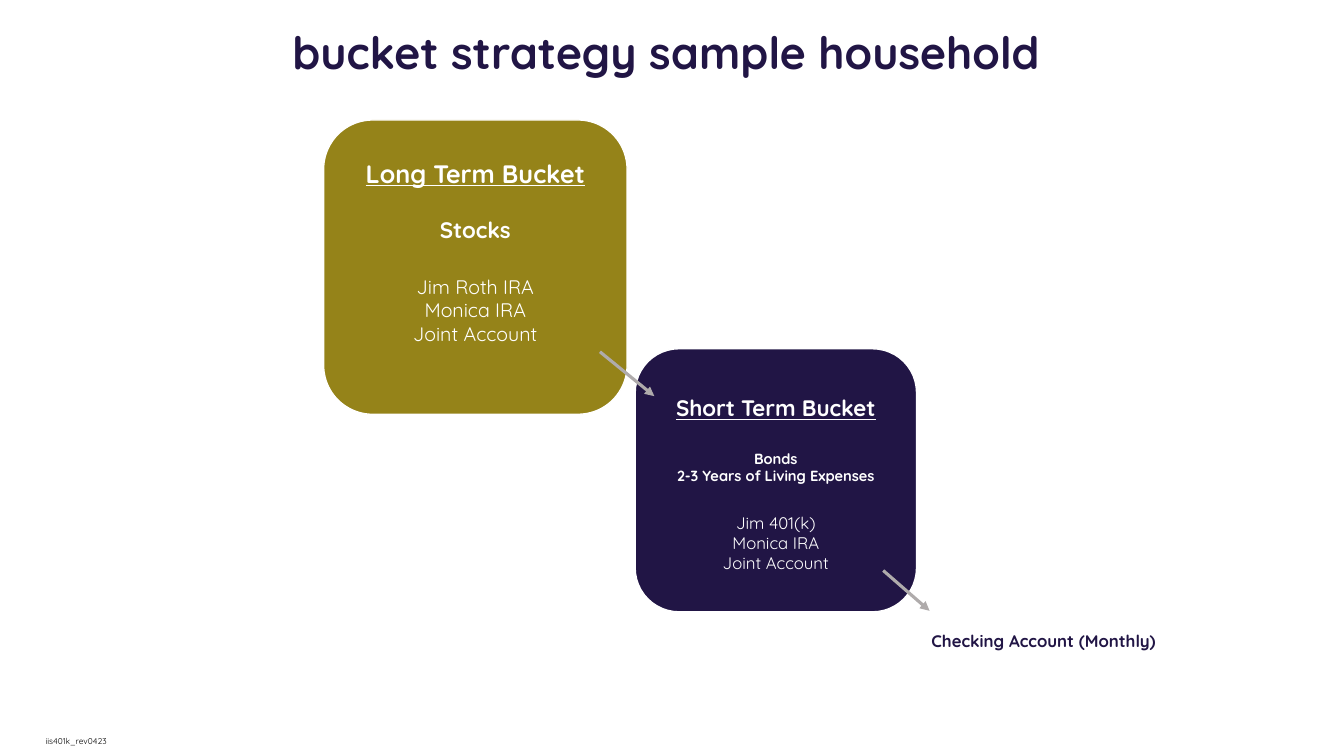
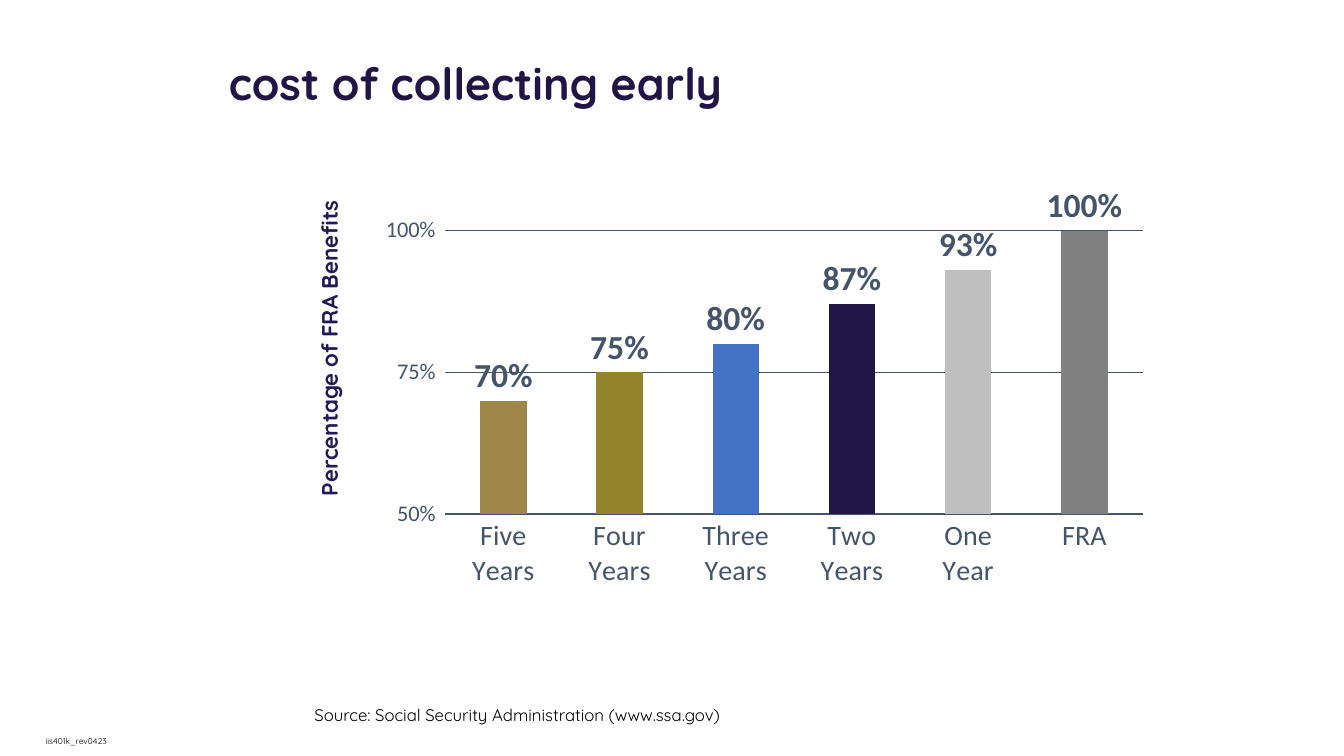
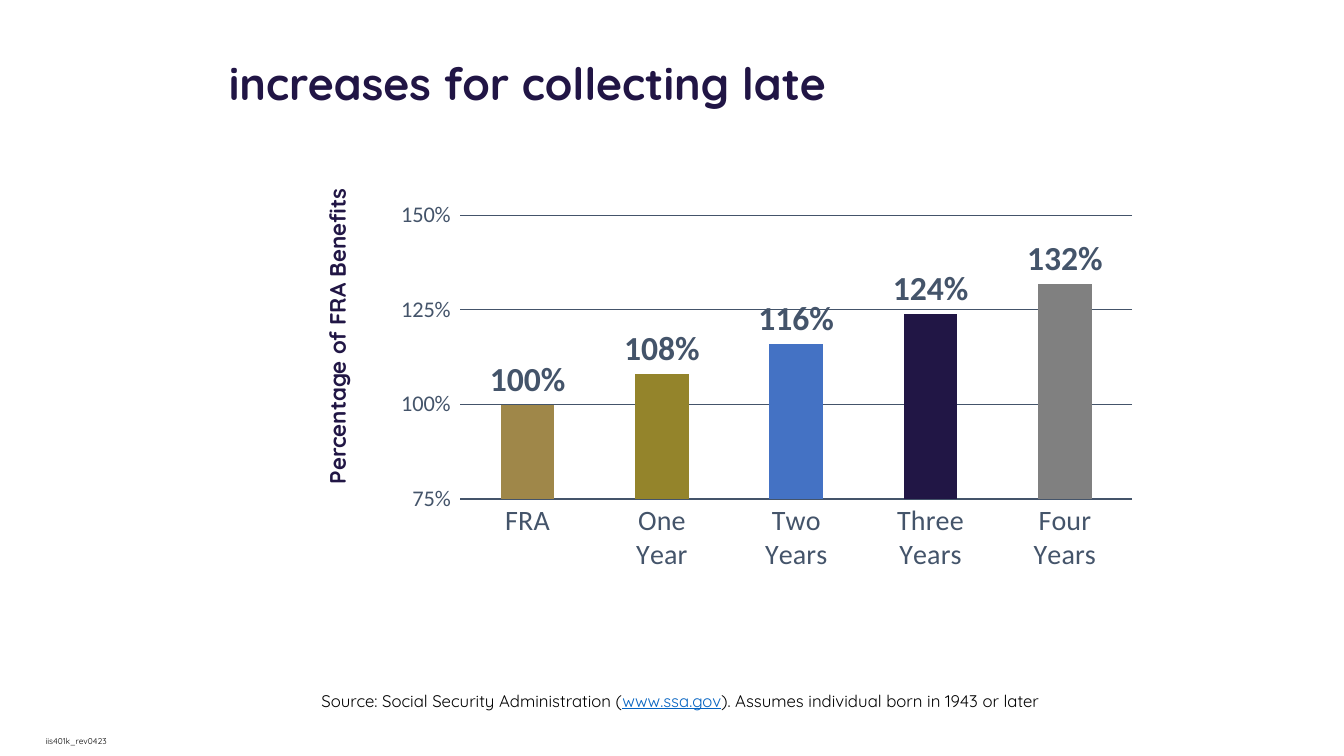
"""Build three slides on retirement buckets and benefit timing."""
import pptx
import pptx.util
import pptx.chart.data
import pptx.dml.color
import pptx.enum.chart
import pptx.enum.shapes
import pptx.enum.text
import pptx.oxml
import pptx.oxml.ns

Inches = pptx.util.Inches
Pt = pptx.util.Pt
RGB = pptx.dml.color.RGBColor
ALIGN = pptx.enum.text.PP_ALIGN
ANCHOR = pptx.enum.text.MSO_ANCHOR

WHITE = RGB(0xFF, 0xFF, 0xFF)
BLACK = RGB(0, 0, 0)
NAVY = RGB(0x21, 0x15, 0x45)
DUSK = RGB(0x21, 0x1A, 0x55)
PLUM = RGB(0x21, 0x16, 0x45)
OLIVE = RGB(0x95, 0x83, 0x19)
MOSS = RGB(0x94, 0x84, 0x2B)
TAN = RGB(0x9F, 0x87, 0x49)
BLUE = RGB(0x44, 0x72, 0xC4)
SLATE = RGB(0x44, 0x54, 0x6A)
SILVER = RGB(0xBF, 0xBF, 0xBF)
GRAY = RGB(0x80, 0x80, 0x80)
ARROW = RGB(0xAF, 0xAB, 0xAB)
LINK = RGB(0x05, 0x63, 0xC1)
FACE = "Quicksand"
BODY = "Calibri"


def style(font, size, color, bold=False, name=FACE):
    """Set the look of a font."""
    font.size, font.bold, font.name = Pt(size), bold, name
    font.color.rgb = color


def place(spot):
    """Turn a tuple of inches into lengths."""
    return [Inches(n) for n in spot]


def start(deck, title, spot):
    """Add a slide with its title and form code."""
    slide = deck.slides.add_slide(deck.slide_layouts[5])
    head = slide.shapes.title
    head.left, head.top, head.width, head.height = place(spot)
    frame = head.text_frame
    frame.text = title
    frame.word_wrap = True
    frame.auto_size = pptx.enum.text.MSO_AUTO_SIZE.NONE
    frame.vertical_anchor = ANCHOR.BOTTOM
    para = frame.paragraphs[0]
    para.alignment, para.line_spacing = ALIGN.LEFT, 0.9
    style(para.font, 32, NAVY, True)
    label(slide, "iis401k_rev0423", (0, 7.26, 1.51, 0.18), 6, BLACK,
          align=ALIGN.CENTER, anchor=ANCHOR.MIDDLE)
    return slide


def label(slide, text, spot, size, color, bold=False, align=ALIGN.LEFT,
          anchor=ANCHOR.TOP, wrap=True):
    """Add a one-line text box."""
    box = slide.shapes.add_textbox(*place(spot))
    frame = box.text_frame
    frame.word_wrap, frame.vertical_anchor = wrap, anchor
    para = frame.paragraphs[0]
    para.text, para.alignment = text, align
    style(para.font, size, color, bold)
    return box


def bucket(slide, spot, fill, lines, head, foot):
    """Add a round box of (text, size, bold, space before) lines."""
    kind = pptx.enum.shapes.MSO_SHAPE.ROUNDED_RECTANGLE
    box = slide.shapes.add_shape(kind, *place(spot))
    box.shadow.inherit = False
    box.fill.solid()
    box.fill.fore_color.rgb = fill
    box.line.color.rgb, box.line.width = WHITE, Pt(1)
    frame = box.text_frame
    frame.word_wrap, frame.vertical_anchor = True, ANCHOR.MIDDLE
    frame.margin_top, frame.margin_bottom = Inches(head), Inches(foot)
    for i, (text, size, bold, gap) in enumerate(lines):
        para = frame.add_paragraph() if i else frame.paragraphs[0]
        para.text, para.alignment = text, ALIGN.CENTER
        para.space_before = Pt(gap)
        style(para.font, size, WHITE, bold)
        para.font.underline = i == 0


def arrow(slide, *ends):
    """Add a gray arrow between two points."""
    kind = pptx.enum.shapes.MSO_CONNECTOR.STRAIGHT
    line = slide.shapes.add_connector(kind, *place(ends))
    line.line.color.rgb, line.line.width = ARROW, Pt(2.25)
    tail = pptx.oxml.ns.qn("a:tailEnd")
    stroke = line.line._get_or_add_ln()
    stroke.append(stroke.makeelement(tail, {"type": "triangle"}))
    props = line._element.spPr
    props.append(props.makeelement(pptx.oxml.ns.qn("a:effectLst"), {}))


def fix_plot(chart):
    """Pin the inner plot area inside the chart."""
    area = chart._chartSpace.chart.plotArea
    old = area.find(pptx.oxml.ns.qn("c:layout"))
    if old is not None:
        area.remove(old)
    rows = [("layoutTarget", "inner"), ("xMode", "edge"), ("yMode", "edge"),
            ("x", 0.1), ("y", 0.2), ("w", 0.88), ("h", 0.62)]
    inner = "".join(f'<c:{tag} val="{val}"/>' for tag, val in rows)
    area.insert(0, pptx.oxml.parse_xml(
        f'<c:layout {pptx.oxml.ns.nsdecls("c")}>'
        f'<c:manualLayout>{inner}</c:manualLayout></c:layout>'))


def columns(slide, spot, bars, low, high):
    """Add a column chart of (name, value, colour) bars."""
    data = pptx.chart.data.CategoryChartData(number_format="0%")
    data.categories = [name for name, _, _ in bars]
    data.add_series("Series 1", [value for _, value, _ in bars])
    kind = pptx.enum.chart.XL_CHART_TYPE.COLUMN_CLUSTERED
    chart = slide.shapes.add_chart(kind, *place(spot), data).chart
    chart.has_title = chart.has_legend = False
    style(chart.font, 18, BLACK, name=BODY)
    fix_plot(chart)

    mark = pptx.enum.chart.XL_TICK_MARK
    base, scale = chart.category_axis, chart.value_axis
    base.major_tick_mark = mark.NONE
    base.format.line.color.rgb = SLATE
    base.format.line.width = Pt(1.5)
    style(base.tick_labels.font, 20, SLATE, name=BODY)
    scale.minimum_scale, scale.maximum_scale = low, high
    scale.major_unit = 0.25
    scale.major_tick_mark = mark.OUTSIDE
    scale.format.line.fill.background()
    grid = scale.major_gridlines.format.line
    grid.color.rgb, grid.width = SLATE, Pt(0.75)
    style(scale.tick_labels.font, 16, SLATE, name=BODY)
    scale.tick_labels.number_format = "0%"
    scale.tick_labels.number_format_is_linked = False

    plot = chart.plots[0]
    plot.gap_width, plot.vary_by_categories = 150, False
    plot.has_data_labels = True
    tags = plot.data_labels
    tags.show_value = True
    tags.number_format, tags.number_format_is_linked = "0%", False
    tags.position = pptx.enum.chart.XL_LABEL_POSITION.OUTSIDE_END
    style(tags.font, 24, SLATE, True, BODY)
    series = plot.series[0]
    series.format.fill.solid()
    series.format.fill.fore_color.rgb = BLUE
    for i, (_, _, color) in enumerate(bars):
        fill = series.points[i].format.fill
        fill.solid()
        fill.fore_color.rgb = color


def side(slide, left, top, color):
    """Add the upright name of the value axis."""
    box = label(slide, "Percentage of FRA Benefits", (left, top, 3.15, 0.37),
                16, color, True, align=ALIGN.CENTER, wrap=False)
    box.rotation = 270


def buckets(deck):
    """Build the bucket slide."""
    slide = start(deck, "bucket strategy sample household",
                  (2.8, 0.2, 8.57, 0.64))
    bucket(slide, (3.21, 1.19, 3.01, 2.92), OLIVE, [
        ("Long Term Bucket", 18, True, 0),
        ("Stocks", 16, True, 20),
        ("Jim Roth IRA", 14, False, 22.5),
        ("Monica IRA", 14, False, 0),
        ("Joint Account", 14, False, 0)], 0.05, 0.36)
    bucket(slide, (6.3, 3.46, 2.79, 2.61), NAVY, [
        ("Short Term Bucket", 16, True, 0),
        ("Bonds", 10.5, True, 20),
        ("2-3 Years of Living Expenses", 10.5, True, 0),
        ("Jim 401(k)", 12, False, 20),
        ("Monica IRA", 12, False, 0),
        ("Joint Account", 12, False, 0)], 0.12, 0.05)
    arrow(slide, 5.95, 3.49, 6.49, 3.93)
    arrow(slide, 8.76, 5.66, 9.22, 6.06)
    label(slide, "Checking Account (Monthly)", (9.14, 6.21, 2.69, 0.44),
          12, NAVY, True)


def early(deck):
    """Build the slide on collecting early."""
    slide = start(deck, "cost of collecting early", (2.17, 0.53, 10.25, 0.61))
    columns(slide, (3.63, 1.38, 7.86, 4.54), [
        ("Five\nYears", 0.7, TAN), ("Four\nYears", 0.75, MOSS),
        ("Three\nYears", 0.8, BLUE), ("Two\nYears", 0.87, PLUM),
        ("One\nYear", 0.93, SILVER), ("FRA", 1, GRAY)], 0.5, 1)
    side(slide, 1.69, 3.27, DUSK)
    label(slide, "Source: Social Security Administration (www.ssa.gov)",
          (3.02, 6.94, 7.15, 0.3), 12, BLACK)


def late(deck):
    """Build the slide on collecting late."""
    slide = start(deck, "increases for collecting late",
                  (2.17, 0.53, 10.25, 0.61))
    columns(slide, (3.81, 1.23, 7.57, 4.54), [
        ("FRA", 1, TAN), ("One\nYear", 1.08, MOSS),
        ("Two\nYears", 1.16, BLUE), ("Three\nYears", 1.24, PLUM),
        ("Four\nYears", 1.32, GRAY)], 0.75, 1.5)
    side(slide, 1.77, 3.15, PLUM)
    note = label(slide, "Source: Social Security Administration (",
                 (3.09, 6.8, 8.1, 0.3), 12, BLACK)
    para = note.text_frame.paragraphs[0]
    site = para.add_run()
    site.text = "www.ssa.gov"
    site.font.color.rgb, site.font.underline = LINK, True
    para.add_run().text = "). Assumes individual born in 1943 or later"


def main():
    """Build and save the deck."""
    deck = pptx.Presentation()
    deck.slide_width, deck.slide_height = Inches(13.33), Inches(7.5)
    buckets(deck)
    early(deck)
    late(deck)
    deck.save("out.pptx")


if __name__ == "__main__":
    main()
